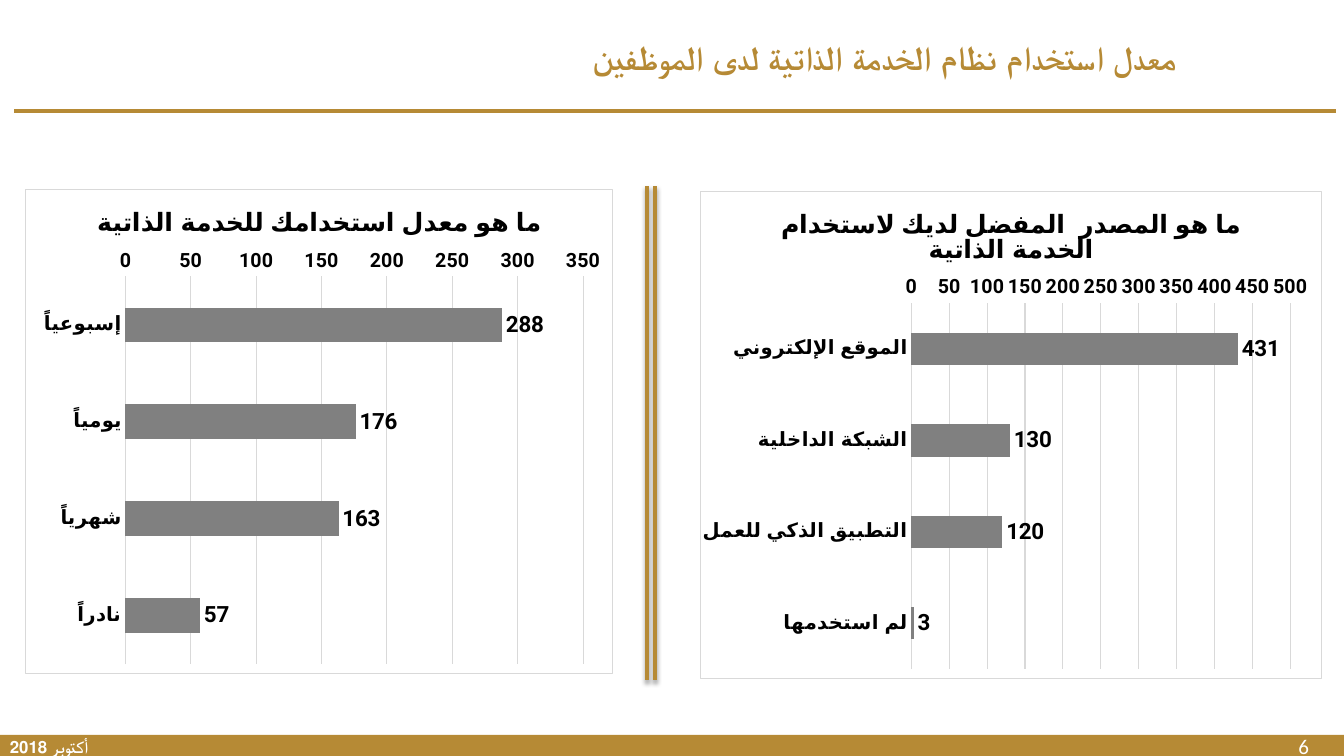
from lxml.etree import SubElement
from pptx import Presentation
from pptx.chart.data import CategoryChartData
from pptx.dml.color import RGBColor
from pptx.enum.chart import XL_CHART_TYPE, XL_LABEL_POSITION, XL_TICK_MARK
from pptx.enum.shapes import MSO_CONNECTOR, MSO_SHAPE
from pptx.enum.text import MSO_ANCHOR, MSO_AUTO_SIZE, PP_ALIGN
from pptx.oxml import parse_xml
from pptx.oxml.ns import nsdecls, qn
from pptx.util import Inches, Pt

GOLD = RGBColor(0xB6, 0x8A, 0x35)
WHITE = RGBColor(0xFF, 0xFF, 0xFF)
BLACK = RGBColor(0, 0, 0)
BAR_GRAY = RGBColor(0x80, 0x80, 0x80)
RULE_GRAY = RGBColor(0xD9, 0xD9, 0xD9)
WIDTH, HEIGHT = 13.33, 7.5
DIVIDER_LEFT, DIVIDER_GAP = 6.42, 0.08
DIVIDER_TOP, DIVIDER_BOTTOM = 1.85, 6.75


def style_font(font, size, color, bold=True, name="Roboto"):
    """Set size, colour, weight and typeface of a font."""
    font.size, font.bold, font.name = Pt(size), bold, name
    font.color.rgb = color


def add_title(slide, text, box):
    """Place and format the right-to-left slide title."""
    title = slide.shapes.title
    title.left, title.top, title.width, title.height = map(Inches, box)
    frame = title.text_frame
    frame.text = text
    frame.word_wrap = True
    frame.auto_size = MSO_AUTO_SIZE.NONE
    frame.vertical_anchor = MSO_ANCHOR.MIDDLE
    heading = frame.paragraphs[0]
    heading.alignment = PP_ALIGN.CENTER
    heading.space_before = Pt(0)
    heading.line_spacing = 1.0
    heading._p.get_or_add_pPr().set("rtl", "1")
    style_font(heading.font, 24, GOLD)


def add_rule(slide, start, end, shadow=False):
    """Draw a gold line, with a soft shadow below it if asked."""
    rule = slide.shapes.add_connector(
        MSO_CONNECTOR.STRAIGHT, *map(Inches, start + end))
    rule.line.color.rgb = GOLD
    rule.line.width = Pt(3)
    effects = SubElement(rule._element.spPr, qn("a:effectLst"))
    if shadow:
        effects.append(parse_xml(
            f'<a:outerShdw {nsdecls("a")} blurRad="{Pt(3.1)}" dist="{Pt(1.8)}" '
            'dir="5400000" rotWithShape="0"><a:srgbClr val="000000">'
            '<a:alpha val="35000"/></a:srgbClr></a:outerShdw>'))


def add_footer_text(slide, text, box, size, **font_style):
    """Write white text on the footer band."""
    label = slide.shapes.add_textbox(*map(Inches, box))
    label.text_frame.word_wrap = True
    paragraph = label.text_frame.paragraphs[0]
    paragraph.text = text
    style_font(paragraph.font, size, WHITE, **font_style)


def add_footer(slide):
    """Draw the footer band with the date and the page number."""
    band = slide.shapes.add_shape(
        MSO_SHAPE.RECTANGLE, 0, Inches(7.29), Inches(WIDTH), Inches(0.21))
    band.shadow.inherit = False
    band.fill.solid()
    band.fill.fore_color.rgb = GOLD
    band.line.fill.background()
    add_footer_text(slide, "6", (12.78, 7.23, 0.78, 0.4), 15, bold=False, name="Calibri")
    add_footer_text(slide, "أكتوبر 2018", (0, 7.26, 2.11, 0.4), 12)


def frame_chart(chart, plot_shares):
    """Give the chart a thin border and place its plot by shares of its size."""
    space = chart.element
    space.find(qn("c:chart")).addnext(parse_xml(
        f'<c:spPr {nsdecls("c", "a")}><a:noFill/><a:ln w="{Pt(0.75)}"><a:solidFill>'
        f'<a:srgbClr val="{RULE_GRAY}"/></a:solidFill></a:ln></c:spPr>'))
    plot_area = space.find(qn("c:chart")).find(qn("c:plotArea"))
    for automatic in plot_area.findall(qn("c:layout")):
        plot_area.remove(automatic)
    modes = '<c:layoutTarget val="inner"/><c:xMode val="edge"/><c:yMode val="edge"/>'
    shares = "".join(f'<c:{side} val="{share}"/>' for side, share in zip("xywh", plot_shares))
    plot_area.insert(0, parse_xml(
        f'<c:layout {nsdecls("c")}><c:manualLayout>{modes}{shares}'
        '</c:manualLayout></c:layout>'))


def add_survey_chart(slide, question, answers, box, maximum, plot_shares):
    """Add a bar chart of the answers to one survey question."""
    data = CategoryChartData()
    data.categories = list(answers)
    data.add_series("Series 1", list(answers.values()))
    chart = slide.shapes.add_chart(
        XL_CHART_TYPE.BAR_CLUSTERED, *map(Inches, box), data).chart
    style_font(chart.font, 14, BLACK)
    chart.has_legend = False
    chart.has_title = True
    chart.chart_title.include_in_layout = False
    heading = chart.chart_title.text_frame.paragraphs[0]
    heading.text = question
    style_font(heading.font, 18, BLACK)

    for axis in (chart.category_axis, chart.value_axis):
        axis.major_tick_mark = axis.minor_tick_mark = XL_TICK_MARK.NONE
        style_font(axis.tick_labels.font, 14, BLACK)
    chart.category_axis.reverse_order = True
    chart.category_axis.format.line.color.rgb = RULE_GRAY
    chart.category_axis.format.line.width = Pt(0.75)
    counts = chart.value_axis
    counts.minimum_scale, counts.maximum_scale, counts.major_unit = 0, maximum, 50
    counts.format.line.fill.background()
    counts.major_gridlines.format.line.color.rgb = RULE_GRAY
    counts.major_gridlines.format.line.width = Pt(0.75)

    bars = chart.plots[0]
    bars.gap_width = 182
    bars.vary_by_categories = False
    bars.series[0].format.fill.solid()
    bars.series[0].format.fill.fore_color.rgb = BAR_GRAY
    bars.has_data_labels = True
    bars.data_labels.show_value = True
    bars.data_labels.position = XL_LABEL_POSITION.OUTSIDE_END
    style_font(bars.data_labels.font, 16, BLACK)
    frame_chart(chart, plot_shares)


def main():
    """Build the slide and save it."""
    deck = Presentation()
    deck.slide_width, deck.slide_height = Inches(WIDTH), Inches(HEIGHT)
    slide = deck.slides.add_slide(deck.slide_layouts[5])
    add_footer(slide)
    add_rule(slide, (0.14, 1.1), (13.25, 1.1))
    add_title(slide, "معدل استخدام نظام الخدمة الذاتية لدى الموظفين",
              (5.26, 0.17, 7.03, 0.8))
    for column in range(2):
        x = DIVIDER_LEFT + column * DIVIDER_GAP
        add_rule(slide, (x, DIVIDER_TOP), (x, DIVIDER_BOTTOM), shadow=True)
    add_survey_chart(
        slide, "ما هو المصدر  المفضل لديك لاستخدام الخدمة الذاتية",
        {"الموقع الإلكتروني": 431, "الشبكة الداخلية": 130,
         "التطبيق الذكي للعمل": 120, "لم استخدمها": 3},
        (6.94, 1.89, 6.17, 4.85), 500, (0.34, 0.23, 0.61, 0.75))
    add_survey_chart(
        slide, "ما هو معدل استخدامك للخدمة الذاتية",
        {"إسبوعياً": 288, "يومياً": 176, "شهرياً": 163, "نادراً": 57},
        (0.25, 1.87, 5.83, 4.82), 350, (0.17, 0.18, 0.78, 0.8))
    deck.save("out.pptx")


if __name__ == "__main__":
    main()
